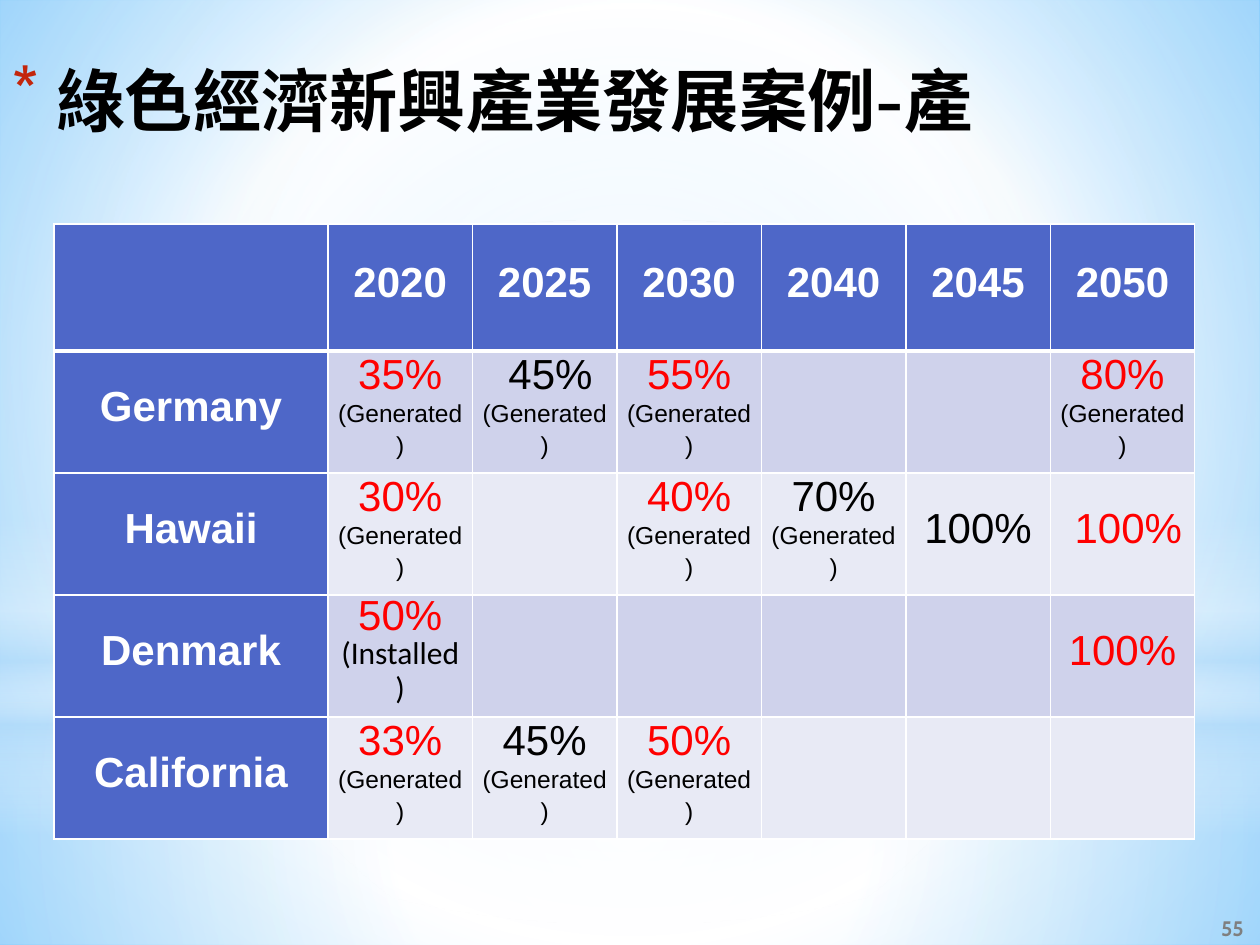
from pptx import Presentation
from pptx.dml.color import RGBColor
from pptx.enum.shapes import MSO_SHAPE
from pptx.enum.text import MSO_ANCHOR, MSO_AUTO_SIZE, PP_ALIGN
from pptx.oxml import parse_xml
from pptx.oxml.ns import nsdecls, qn
from pptx.util import Pt

SCALE = 914400 / 126
SLIDE_WIDTH, SLIDE_HEIGHT = 1260, 945

COLORS = {
    "ink": "000000",
    "white": "FFFFFF",
    "target": "FF0000",
    "header": "4E67C8",
    "band_dark": "CFD2EB",
    "band_light": "E8EAF5",
    "bullet": "C3260C",
    "page": "7F7F7F",
    "sky": "99D4FE",
    "deep_sky": "54BDFF",
    "mist": "B4DCFA",
}

YEARS = ["2020", "2025", "2030", "2040", "2045", "2050"]
TARGET_YEARS = {"2020", "2030", "2050"}
GENERATED, INSTALLED = "(Generated)", "(Installed)"
BASIS_STYLES = {GENERATED: (14, "Arial", 1.16), INSTALLED: (18, "Calibri", 0.9)}
SHARES = {
    "Germany": {
        "2020": ("35%", GENERATED),
        "2025": (" 45%", GENERATED),
        "2030": ("55%", GENERATED),
        "2050": ("80%", GENERATED),
    },
    "Hawaii": {
        "2020": ("30%", GENERATED),
        "2030": ("40%", GENERATED),
        "2040": ("70%", GENERATED),
        "2045": ("100%", None),
        "2050": (" 100%", None),
    },
    "Denmark": {"2020": ("50%", INSTALLED), "2050": ("100%", None)},
    "California": {
        "2020": ("33%", GENERATED),
        "2025": ("45%", GENERATED),
        "2030": ("50%", GENERATED),
    },
}


def px(length):
    return round(length * SCALE)


def rgb(name):
    return RGBColor.from_string(COLORS[name])


def paint_gradient(fill, owner, stops, circular=True):
    fill.solid()
    solid = owner.find(".//" + qn("a:solidFill"))
    stop_xml = "".join(
        f'<a:gs pos="{position * 1000}"><a:srgbClr val="{COLORS[color]}">'
        f'<a:alpha val="{alpha * 1000}"/></a:srgbClr></a:gs>'
        for position, color, alpha in stops
    )
    direction = (
        '<a:path path="circle"><a:fillToRect l="50000" t="50000" r="50000" b="50000"/></a:path>'
        if circular
        else '<a:lin ang="5400000" scaled="0"/>'
    )
    gradient = parse_xml(
        f'<a:gradFill {nsdecls("a")} rotWithShape="1"><a:gsLst>{stop_xml}</a:gsLst>{direction}</a:gradFill>'
    )
    solid.getparent().replace(solid, gradient)


def add_glow(slide, outline, top, height, stops, circular=True):
    glow = slide.shapes.add_shape(outline, 0, px(top), px(SLIDE_WIDTH), px(height))
    glow.shadow.inherit = False
    paint_gradient(glow.fill, glow.element, stops, circular)
    glow.line.fill.background()


def add_backdrop(slide):
    paint_gradient(
        slide.background.fill,
        slide.element,
        [(0, "sky", 100), (60, "white", 100), (100, "deep_sky", 100)],
    )
    horizon = 703
    add_glow(slide, MSO_SHAPE.RECTANGLE, horizon, SLIDE_HEIGHT - horizon,
             [(0, "white", 91), (37, "white", 76), (100, "mist", 79)])
    add_glow(slide, MSO_SHAPE.RECTANGLE, 0, horizon,
             [(0, "white", 89), (48, "white", 62), (100, "mist", 79)])
    add_glow(slide, MSO_SHAPE.RECTANGLE, 519, 315,
             [(0, "white", 0), (29, "white", 30), (45, "mist", 40),
              (55, "white", 26), (65, "mist", 60), (100, "white", 0)], circular=False)
    add_glow(slide, MSO_SHAPE.OVAL, 220, horizon,
             [(0, "white", 100), (56, "white", 0), (100, "white", 0)])


def add_run(paragraph, text, size, font, color, bold=False):
    run = paragraph.add_run()
    run.text = text
    run.font.size = Pt(size)
    run.font.name = font
    run.font.bold = bold
    run.font.color.rgb = rgb(color)


def set_title(slide, text):
    title = slide.shapes.title
    slide.shapes.element.append(title.element)
    title.left, title.top, title.width, title.height = px(0), px(52), px(1250), px(139)
    frame = title.text_frame
    frame.auto_size = MSO_AUTO_SIZE.NONE
    frame.vertical_anchor = MSO_ANCHOR.TOP
    paragraph = frame.paragraphs[0]
    paragraph.alignment = PP_ALIGN.LEFT
    properties = paragraph._p.get_or_add_pPr()
    properties.set("marL", str(px(44)))
    properties.set("indent", str(px(-44)))
    properties.append(parse_xml(
        f'<a:buClr {nsdecls("a")}><a:srgbClr val="{COLORS["bullet"]}"/></a:buClr>'))
    properties.append(parse_xml(f'<a:buChar {nsdecls("a")} char="*"/>'))
    add_run(paragraph, text, 39, "Cabin", "ink", bold=True)


def format_cell(cell, fill, bottom_width=1):
    properties = cell._tc.get_or_add_tcPr()
    widths = {"lnL": 1, "lnR": 1, "lnT": 1, "lnB": bottom_width}
    for side, width in widths.items():
        properties.append(parse_xml(
            f'<a:{side} {nsdecls("a")} w="{Pt(width)}"><a:solidFill>'
            f'<a:srgbClr val="{COLORS["white"]}"/></a:solidFill></a:{side}>'))
    cell.fill.solid()
    cell.fill.fore_color.rgb = rgb(fill)
    cell.vertical_anchor = MSO_ANCHOR.MIDDLE
    cell.margin_left = cell.margin_right = px(9)
    cell.margin_top = cell.margin_bottom = 0


def write_line(paragraph, text, size, font, color, spacing, bold=False):
    paragraph.alignment = PP_ALIGN.CENTER
    paragraph.line_spacing = spacing
    add_run(paragraph, text, size, font, color, bold)


def write_heading(cell, text, bottom_width=1):
    format_cell(cell, "header", bottom_width)
    if text:
        write_line(cell.text_frame.paragraphs[0], text, 24, "Arial", "white", 0.68, bold=True)


def write_share(cell, share, basis, color):
    frame = cell.text_frame
    write_line(frame.paragraphs[0], share, 24, "Arial", color, 0.68)
    if basis:
        size, font, spacing = BASIS_STYLES[basis]
        write_line(frame.add_paragraph(), basis, size, font, "ink", spacing)


def add_share_table(slide):
    width, country_width = 1141, 274
    header_height, country_height = 127, 122
    height = header_height + country_height * len(SHARES)
    table = slide.shapes.add_table(
        len(SHARES) + 1, len(YEARS) + 1, px(54), px(224), px(width), px(height)
    ).table
    table.first_row = table.horz_banding = False
    for index, column in enumerate(table.columns):
        column.width = px((width - country_width) / len(YEARS) if index else country_width)
    for index, row in enumerate(table.rows):
        row.height = px(country_height if index else header_height)

    for column, year in enumerate(["", *YEARS]):
        write_heading(table.cell(0, column), year, bottom_width=3)
    for row, (country, shares) in enumerate(SHARES.items(), 1):
        write_heading(table.cell(row, 0), country)
        band = "band_dark" if row % 2 else "band_light"
        for column, year in enumerate(YEARS, 1):
            cell = table.cell(row, column)
            format_cell(cell, band)
            if year in shares:
                write_share(cell, *shares[year], "target" if year in TARGET_YEARS else "ink")


def add_page_number(slide, number):
    frame = slide.shapes.add_textbox(px(1205), px(911), px(55), px(34)).text_frame
    frame.word_wrap = True
    frame.vertical_anchor = MSO_ANCHOR.MIDDLE
    paragraph = frame.paragraphs[0]
    paragraph.alignment = PP_ALIGN.CENTER
    add_run(paragraph, number, 12, "Cabin", "page", bold=True)


def main():
    deck = Presentation()
    deck.slide_width, deck.slide_height = px(SLIDE_WIDTH), px(SLIDE_HEIGHT)
    slide = deck.slides.add_slide(deck.slide_layouts[5])
    add_backdrop(slide)
    set_title(slide, "綠色經濟新興產業發展案例-產")
    add_share_table(slide)
    add_page_number(slide, "55")
    deck.save("out.pptx")


if __name__ == "__main__":
    main()
